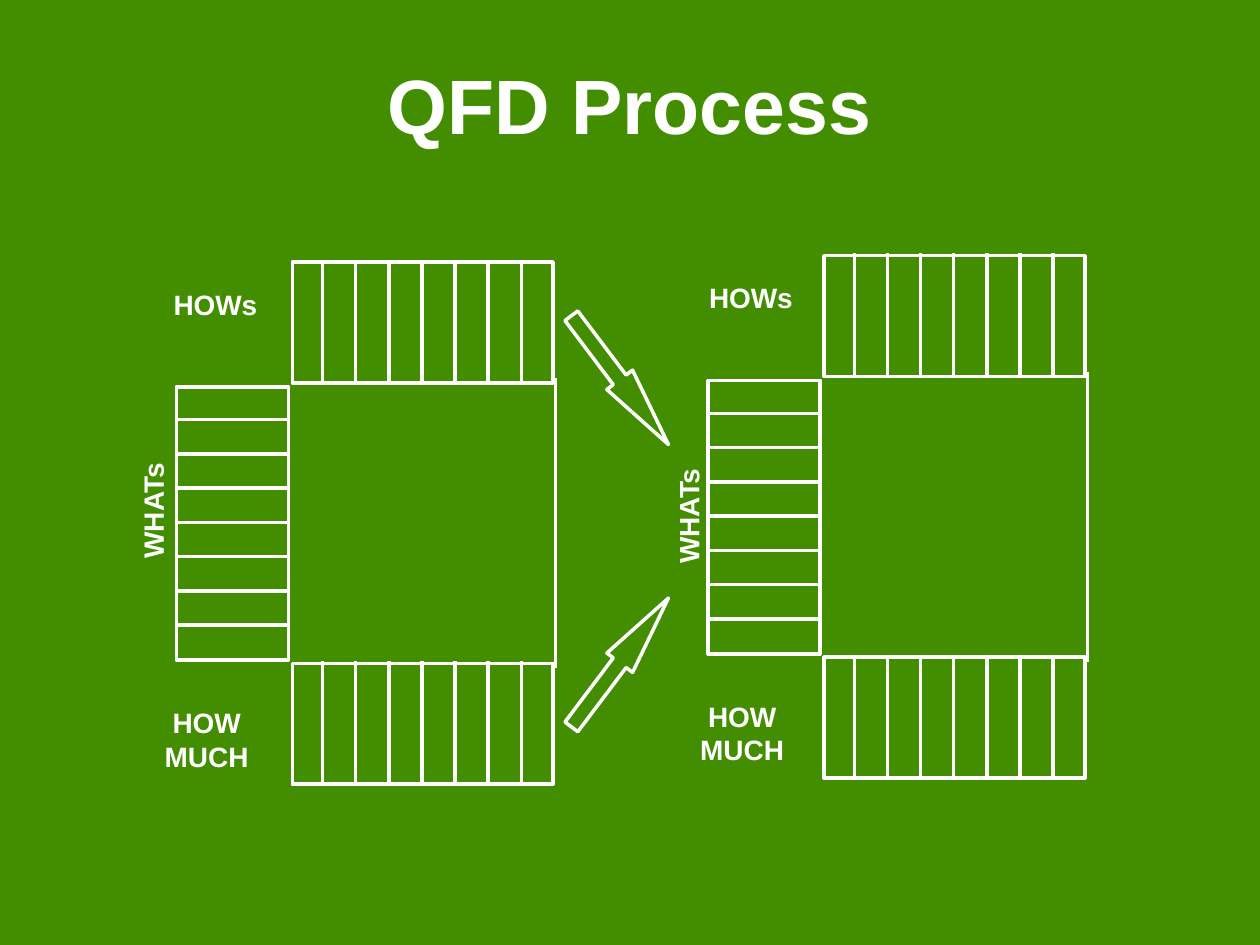
from lxml import etree
from pptx import Presentation
from pptx.dml.color import RGBColor
from pptx.enum.shapes import MSO_CONNECTOR, MSO_SHAPE
from pptx.enum.text import MSO_ANCHOR, PP_ALIGN
from pptx.oxml.ns import qn
from pptx.util import Inches, Pt

STRAIGHT = MSO_CONNECTOR.STRAIGHT
RECTANGLE = MSO_SHAPE.RECTANGLE
RIGHT_ARROW, LEFT_ARROW = MSO_SHAPE.RIGHT_ARROW, MSO_SHAPE.LEFT_ARROW
CENTER, TOP, MIDDLE = PP_ALIGN.CENTER, MSO_ANCHOR.TOP, MSO_ANCHOR.MIDDLE
GREEN, WHITE = "438E00", "FFFFFF"

# The slide is a grid of 100 columns by 75 rows
presentation = Presentation()
presentation.slide_width, presentation.slide_height = Inches(10), Inches(7.5)
COLUMN = presentation.slide_width / 100
ROW = presentation.slide_height / 75

slide = presentation.slides.add_slide(presentation.slide_layouts[6])
slide.background.fill.solid()
slide.background.fill.fore_color.rgb = RGBColor.from_string(GREEN)


def add_text(text, left, top, width, height, size=16, color=WHITE, anchor=TOP, rotation=0):
    box = slide.shapes.add_textbox(
        int(left * COLUMN), int(top * ROW), int(width * COLUMN), int(height * ROW))
    box.rotation = rotation
    frame = box.text_frame
    frame.word_wrap = True
    frame.vertical_anchor = anchor
    paragraph = frame.paragraphs[0]
    paragraph.text = text
    paragraph.alignment = CENTER
    font = paragraph.font
    font.name, font.size, font.bold = "Arial", Pt(size), True
    font.color.rgb = RGBColor.from_string(color)


def add_outline(left, top, width, height, preset=None):
    """Add an unfilled white preset shape, or a straight line when no preset is given."""
    x, y = int(left * COLUMN), int(top * ROW)
    wide, high = int(width * COLUMN), int(height * ROW)
    if preset is None:
        shape = slide.shapes.add_connector(STRAIGHT, x, y, x + wide, y + high)
    else:
        shape = slide.shapes.add_shape(preset, x, y, wide, high)
        shape.fill.background()
    shape.line.color.rgb = RGBColor.from_string(WHITE)
    shape.line.width = Pt(2)
    # An empty effect list removes the shadow
    etree.SubElement(shape._element.spPr, qn("a:effectLst"))
    return shape


add_text("QFD Process", 5, 2, 90, 12.5, size=44, anchor=MIDDLE)

# Each matrix: left and top of its grid, then left and top of its WHATs label
for left, top, whats_left, whats_top in [(14, 20.8, 6.9, 38.7), (56.2, 20.3, 49.4, 39.1)]:
    add_text("WHATs", whats_left, whats_top, 10.5, 3.7, rotation=270)
    add_text("HOW MUCH", whats_left + 4.6, top + 34.7, 9.8, 6.4)
    add_text("HOWs", whats_left + 5.3, top + 1.5, 9.8, 3.7)

    # HOWs above and HOW MUCH below, eight columns each
    for band_top in (top, top + 31.85):
        add_outline(left + 9.2, band_top, 20.7, 9.6, preset=RECTANGLE)
        for divider in range(7):
            add_outline(left + 11.6 + divider * 2.63, band_top - 0.2, 0, 9.9)

    # WHATs on the left, eight rows
    add_outline(left, top + 9.9, 8.9, 21.7, preset=RECTANGLE)
    for divider in range(7):
        add_outline(left - 0.1, top + 12.5 + divider * 2.72, 9.1, 0)

    # Right edge of the relationship matrix
    add_outline(left + 30.1, top + 9.2, 0, 23)

# Arrows from the first matrix to the WHATs of the second
for preset, top, rotation in [(RIGHT_ARROW, 28.9, 53), (LEFT_ARROW, 51.3, 127)]:
    arrow = add_outline(42.8, top, 12.8, 2.55, preset=preset)
    arrow.rotation = rotation
    arrow.adjustments[0], arrow.adjustments[1] = 0.5, 2.52

presentation.save("out.pptx")
